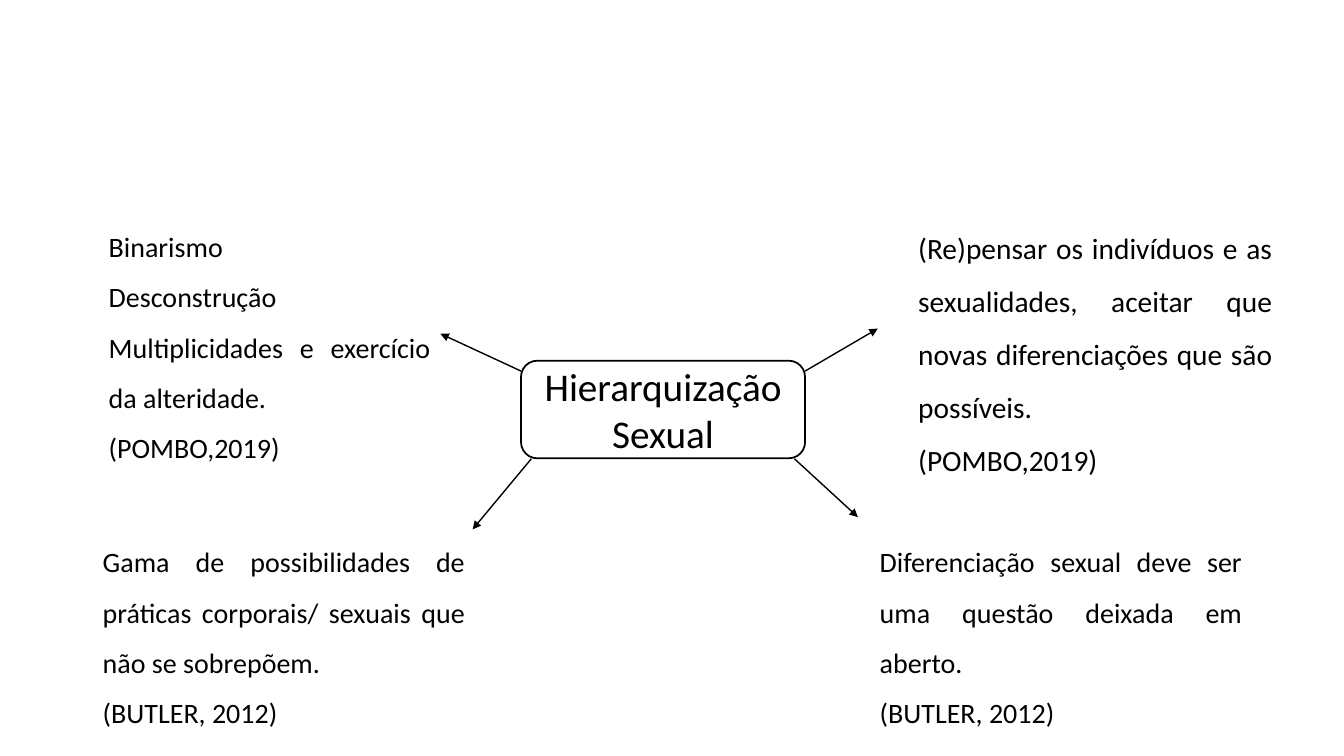
import pptx
import pptx.util
import pptx.dml.color
import pptx.enum.shapes
import pptx.enum.text
import pptx.oxml
import pptx.oxml.ns

Cm = pptx.util.Cm
Pt = pptx.util.Pt
COLORS = {"ink": "000000", "paper": "FFFFFF"}


class ConceptMap:
    def __init__(self, slide, font_name="Calibri"):
        self.slide = slide
        self.font_name = font_name

    def color(self, name):
        return pptx.dml.color.RGBColor.from_string(COLORS[name])

    def set_text(self, shape, paragraphs, size, alignment, spacing=None):
        frame = shape.text_frame
        frame.word_wrap = True
        frame.text = "\n".join(paragraphs)
        for paragraph in frame.paragraphs:
            paragraph.alignment = alignment
            paragraph.line_spacing = spacing
            paragraph.font.name = self.font_name
            paragraph.font.size = Pt(size)
            paragraph.font.color.rgb = self.color("ink")

    def center_box(self, left, top, width, height, text):
        shape = self.slide.shapes.add_shape(
            pptx.enum.shapes.MSO_SHAPE.ROUNDED_RECTANGLE,
            Cm(left), Cm(top), Cm(width), Cm(height))
        shape.shadow.inherit = False
        shape.fill.solid()
        shape.fill.fore_color.rgb = self.color("paper")
        shape.line.color.rgb = self.color("ink")
        shape.line.width = Pt(1.25)
        shape.text_frame.vertical_anchor = pptx.enum.text.MSO_ANCHOR.MIDDLE
        self.set_text(shape, [text], 28, pptx.enum.text.PP_ALIGN.CENTER)

    def note(self, left, top, width, height, size, paragraphs):
        shape = self.slide.shapes.add_textbox(Cm(left), Cm(top), Cm(width), Cm(height))
        self.set_text(shape, paragraphs, size, pptx.enum.text.PP_ALIGN.JUSTIFY, 1.5)

    def arrow(self, start_x, start_y, end_x, end_y):
        connector = self.slide.shapes.add_connector(
            pptx.enum.shapes.MSO_CONNECTOR.STRAIGHT,
            Cm(start_x), Cm(start_y), Cm(end_x), Cm(end_y))
        connector.line.color.rgb = self.color("ink")
        connector.line.width = Pt(1)
        line = connector.line._get_or_add_ln()
        namespace = pptx.oxml.ns.nsdecls("a")
        line.append(pptx.oxml.parse_xml(f'<a:tailEnd {namespace} type="triangle"/>'))
        line.addnext(pptx.oxml.parse_xml(f"<a:effectLst {namespace}/>"))


def main():
    presentation = pptx.Presentation()
    presentation.slide_width = Cm(33.87)
    presentation.slide_height = Cm(19.05)
    slide = presentation.slides.add_slide(presentation.slide_layouts[6])
    concept_map = ConceptMap(slide)

    concept_map.center_box(13.13, 9.09, 7.16, 2.46, "Hierarquização Sexual")

    for ends in [
        (13.13, 9.35, 11.1, 8.41),
        (20.29, 9.35, 22.12, 8.28),
        (20.02, 11.56, 21.62, 13.03),
        (13.39, 11.56, 11.91, 13.34),
    ]:
        concept_map.arrow(*ends)

    concept_map.note(2.49, 5.23, 8.61, 3.33, 20, [
        "Binarismo",
        "Desconstrução",
        "Multiplicidades e exercício da alteridade.",
        "(POMBO,2019)",
    ])
    concept_map.note(22.89, 5.23, 9.42, 4.11, 21, [
        "(Re)pensar os indivíduos e as sexualidades, aceitar que novas "
        "diferenciações que são possíveis.",
        "(POMBO,2019)",
    ])
    concept_map.note(21.92, 13.18, 9.63, 3.33, 20, [
        "Diferenciação sexual deve ser uma questão deixada em aberto.",
        "(BUTLER, 2012)",
    ])
    concept_map.note(2.34, 13.18, 9.63, 3.33, 20, [
        "Gama de possibilidades de práticas corporais/ sexuais que não se sobrepõem.",
        "(BUTLER, 2012)",
    ])

    presentation.save("out.pptx")


if __name__ == "__main__":
    main()
